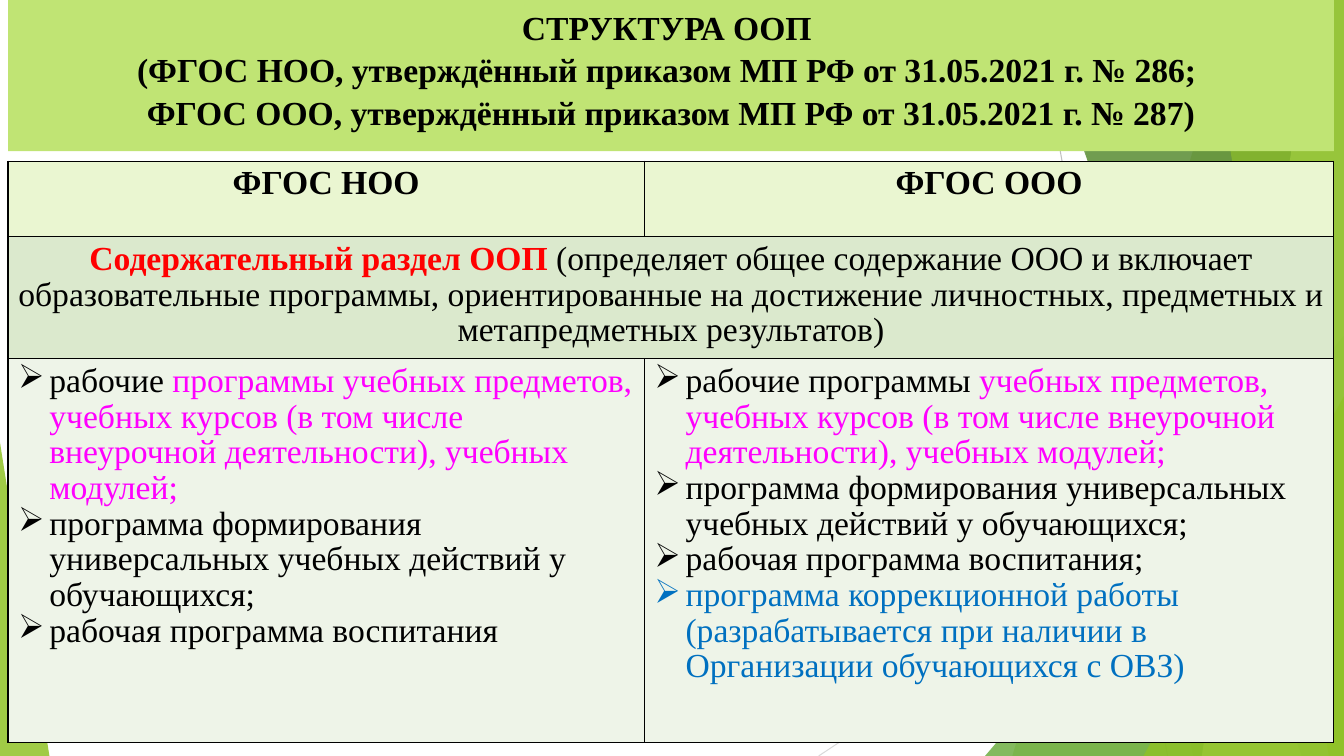
from lxml.etree import SubElement
from pptx import Presentation
from pptx.dml.color import RGBColor
from pptx.enum.shapes import MSO_CONNECTOR as CONN, MSO_SHAPE as SHAPE
from pptx.enum.text import MSO_ANCHOR as ANCHOR, MSO_AUTO_SIZE as AUTO, PP_ALIGN as ALIGN
from pptx.oxml.ns import qn
from pptx.util import Emu, Pt

BLACK = RGBColor(0x00, 0x00, 0x00)
RED = RGBColor(0xFF, 0x00, 0x00)
MAGENTA = RGBColor(0xFF, 0x00, 0xFF)
BLUE = RGBColor(0x00, 0x70, 0xC0)
LIGHT_GRAY = RGBColor(0xD9, 0xD9, 0xD9)
GRAY = RGBColor(0xBF, 0xBF, 0xBF)
GREEN = RGBColor(0x90, 0xC2, 0x26)
MID_GREEN = RGBColor(0x54, 0xA0, 0x21)
DARK_GREEN = RGBColor(0x3F, 0x78, 0x19)
LIME = RGBColor(0xC0, 0xE4, 0x74)
HEAD_FILL = RGBColor(0xEA, 0xF6, 0xD1)
SECTION_FILL = RGBColor(0xDB, 0xE9, 0xCD)
BODY_FILL = RGBColor(0xEE, 0xF4, 0xE8)

PX = 9144  # 100 px to the inch
WIDTH, HEIGHT = 1333, 750


def px(n):
    return Emu(n * PX)


def add_text(p, text, font="Times New Roman", size=24, color=BLACK, bold=False):
    r = p.add_run()
    r.text = text
    r.font.name, r.font.size, r.font.bold = font, Pt(size), bold
    r.font.color.rgb = color


class Deck:
    indent = 31
    title_spacing, table_spacing = 1.05, 0.96

    def __init__(self):
        self.prs = Presentation()
        self.prs.slide_width, self.prs.slide_height = px(WIDTH), px(HEIGHT)
        self.slide = self.prs.slides.add_slide(self.prs.slide_layouts[5])
        self.shapes = self.slide.shapes

    def line(self, x1, y1, x2, y2, color):
        s = self.shapes.add_connector(CONN.STRAIGHT, px(x1), px(y1), px(x2), px(y2))
        s.line.color.rgb, s.line.width = color, Pt(0.75)
        SubElement(s.element.spPr, qn("a:effectLst"))

    def paint(self, s, color, opacity):
        s.shadow.inherit = False
        s.line.fill.background()
        s.fill.solid()
        s.fill.fore_color.rgb = color
        clr = s.element.spPr.find(qn("a:solidFill")).find(qn("a:srgbClr"))
        SubElement(clr, qn("a:alpha"), val=str(opacity * 1000))

    def band(self, top_x, bottom_x, color, opacity):
        """Slanted band reaching the right edge of the slide."""
        fb = self.shapes.build_freeform(top_x, -1, scale=PX)
        fb.add_line_segments([(WIDTH, -1), (WIDTH, HEIGHT), (bottom_x, HEIGHT)])
        self.paint(fb.convert_to_shape(), color, opacity)

    def triangle(self, x, y, w, apex, color, opacity):
        """Triangle standing on the bottom edge of the slide."""
        s = self.shapes.add_shape(SHAPE.ISOSCELES_TRIANGLE, px(x), px(y), px(w), px(HEIGHT - y))
        s.adjustments[0] = apex
        self.paint(s, color, opacity)

    def title(self, x, y, w, h, lines):
        s = self.shapes.title
        s.left, s.top, s.width, s.height = px(x), px(y), px(w), px(h)
        s.fill.solid()
        s.fill.fore_color.rgb = LIME
        tf = s.text_frame
        tf.word_wrap, tf.auto_size, tf.vertical_anchor = True, AUTO.NONE, ANCHOR.TOP
        p = tf.paragraphs[0]
        p.alignment, p.line_spacing = ALIGN.CENTER, self.title_spacing
        for i, text in enumerate(lines):
            if i:
                p.add_line_break()
            add_text(p, text, bold=True)
        self.shapes.element.append(s.element)  # in front of the decoration

    def table(self, x, y, cols, rows):
        frame = self.shapes.add_table(len(rows), len(cols), px(x), px(y),
                                      px(sum(cols)), px(sum(rows)))
        t = frame.table
        for col, w in zip(t.columns, cols):
            col.width = px(w)
        for row, h in zip(t.rows, rows):
            row.height = px(h)
        return t

    def cell(self, cell, fill, paragraphs=(), bullets=False):
        tc_pr = cell._tc.get_or_add_tcPr()
        for side in ("lnL", "lnR", "lnT", "lnB"):
            ln = SubElement(tc_pr, qn("a:" + side), w=str(Pt(1)))
            SubElement(SubElement(ln, qn("a:solidFill")), qn("a:srgbClr"), val=str(BLACK))
        cell.fill.solid()
        cell.fill.fore_color.rgb = fill
        tf = cell.text_frame
        for i, runs in enumerate(paragraphs):
            p = tf.add_paragraph() if i else tf.paragraphs[0]
            p.line_spacing = self.table_spacing
            p.alignment = ALIGN.LEFT if bullets else ALIGN.CENTER
            if bullets:
                self.bullet(p)
            for text, style in runs:
                add_text(p, text, **style)

    def bullet(self, p):
        p_pr = p._p.get_or_add_pPr()
        p_pr.set("marL", str(px(self.indent)))
        p_pr.set("indent", str(px(-self.indent)))
        SubElement(p_pr, qn("a:buChar"), char="➢")


def main():
    d = Deck()

    # Background decoration
    d.line(1025, 0, 1158, HEIGHT, GRAY)
    d.line(WIDTH, 403, 812, HEIGHT, LIGHT_GRAY)
    d.band(1228, 1004, GREEN, 30)
    d.band(1050, 1183, GREEN, 20)
    d.triangle(977, 333, 356, 1, MID_GREEN, 72)
    d.band(1021, 1291, DARK_GREEN, 70)
    d.band(1303, 1192, LIME, 70)
    d.band(1196, 1318, GREEN, 65)
    d.triangle(1134, 393, 199, 1, GREEN, 80)
    d.triangle(0, 439, 49, 0, GREEN, 85)

    # Title
    d.title(8, 0, 1315, 150, [
        "СТРУКТУРА ООП ",
        "(ФГОС НОО, утверждённый приказом МП РФ от 31.05.2021 г. № 286; ",
        "ФГОС ООО, утверждённый приказом МП РФ от 31.05.2021 г. № 287)",
    ])

    # Table header
    t = d.table(8, 160, cols=[631, 684], rows=[75, 121, 381])
    for c, head in enumerate(["ФГОС НОО", "ФГОС ООО"]):
        d.cell(t.cell(0, c), HEAD_FILL, [[(head, {"bold": True})]])

    # Section row across both columns
    t.cell(1, 0).merge(t.cell(1, 1))
    d.cell(t.cell(1, 0), SECTION_FILL, [[
        ("Содержательный раздел ООП ", {"color": RED, "bold": True}),
        ("(определяет общее содержание ООО и включает образовательные программы, "
         "ориентированные на достижение личностных, предметных "
         "и метапредметных результатов)", {}),
    ]])
    d.cell(t.cell(1, 1), SECTION_FILL)

    # Programme lists
    subjects = ("учебных предметов, учебных курсов (в том числе внеурочной "
                "деятельности), учебных модулей;")
    skills = [("программа формирования универсальных учебных действий у обучающихся;", {})]
    upbringing = "рабочая программа воспитания"
    primary = [
        [("рабочие ", {}), ("программы " + subjects, {"color": MAGENTA})],
        skills,
        [(upbringing, {})],
    ]
    secondary = [
        [("рабочие программы ", {}), (subjects, {"color": MAGENTA})],
        skills,
        [(upbringing + ";", {})],
        [("программа коррекционной работы (разрабатывается при наличии в "
          "Организации обучающихся с ОВЗ)", {"color": BLUE})],
    ]
    for c, items in enumerate([primary, secondary]):
        d.cell(t.cell(2, c), BODY_FILL, items, bullets=True)

    d.prs.save("out.pptx")


if __name__ == "__main__":
    main()
